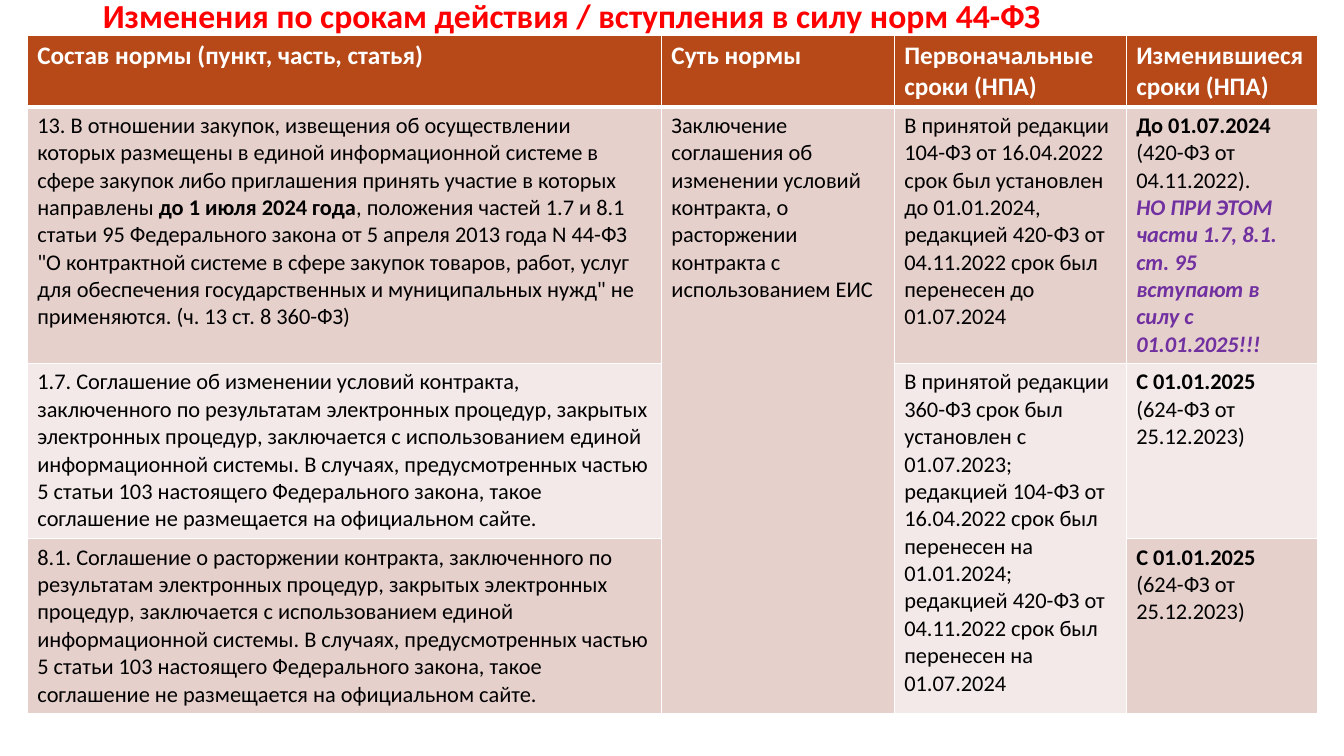
"""Build a slide with a table of changed effective dates in law 44-ФЗ."""
from lxml.etree import SubElement
from pptx import Presentation
from pptx.dml.color import RGBColor
from pptx.enum.text import MSO_ANCHOR, MSO_AUTO_SIZE, PP_ALIGN
from pptx.oxml.ns import qn
from pptx.util import Inches, Pt

THEME = {
    "font": "Calibri",
    "fills": ["B74919", "E6D0CC", "F3E9E8", "E6D0CC"],
    "border": "FFFFFF",
    "title": ("FF0000", {"size": Pt(24), "bold": True}),
    "head": ("FFFFFF", {"size": Pt(18), "bold": True}),
    "body": ("000000", {"size": Pt(16), "bold": False}),
    "bold": ("000000", {"size": Pt(16), "bold": True}),
    "alert": ("7030A0", {"size": Pt(16), "bold": True, "italic": True}),
}
COLS = [6.29, 2.31, 2.3, 1.9]
ROWS = [0.7, 2.54, 1.74, 1.73]
MERGES = [((1, 1), (3, 1)), ((2, 2), (3, 2))]

HEADS = ["Состав нормы (пункт, часть, статья)", "Суть нормы",
         "Первоначальные сроки (НПА)", "Изменившиеся сроки (НПА)"]
PROCEDURE = (
    ", заключенного по результатам электронных процедур, закрытых электронных "
    "процедур, заключается с использованием единой информационной системы. "
    "В случаях, предусмотренных частью 5 статьи 103 настоящего Федерального "
    "закона, такое соглашение не размещается на официальном сайте."
)
FROM_2025 = [[("С 01.01.2025 ", "bold"), ("(624-ФЗ от 25.12.2023)", "body")]]
CELLS = {(0, c): [[(text, "head")]] for c, text in enumerate(HEADS)} | {
    (1, 0): [[
        ("13. В отношении закупок, извещения об осуществлении которых размещены "
         "в единой информационной системе в сфере закупок либо приглашения "
         "принять участие в которых направлены ", "body"),
        ("до 1 июля 2024 года", "bold"),
        (", положения частей 1.7 и 8.1 статьи 95 Федерального закона от 5 апреля "
         "2013 года N 44-ФЗ \"О контрактной системе в сфере закупок товаров, "
         "работ, услуг для обеспечения государственных и муниципальных нужд\" "
         "не применяются. (ч. 13 ст. 8 360-ФЗ)", "body"),
    ]],
    (1, 1): [[("Заключение соглашения об изменении условий контракта, о "
               "расторжении контракта с использованием ЕИС", "body")]],
    (1, 2): [[("В принятой редакции 104-ФЗ от 16.04.2022 срок был установлен до "
               "01.01.2024, редакцией 420-ФЗ от 04.11.2022 срок был перенесен до "
               "01.07.2024", "body")]],
    (1, 3): [
        [("До 01.07.2024", "bold")],
        [("(420-ФЗ от 04.11.2022).", "body")],
        [("НО ПРИ ЭТОМ части 1.7, 8.1. ст. 95 вступают в силу с 01.01.2025!!!",
          "alert")],
    ],
    (2, 0): [[("1.7. Соглашение об изменении условий контракта" + PROCEDURE, "body")]],
    (2, 2): [[("В принятой редакции 360-ФЗ срок был установлен с 01.07.2023; "
               "редакцией 104-ФЗ от 16.04.2022 срок был перенесен на 01.01.2024; "
               "редакцией 420-ФЗ от 04.11.2022 срок был перенесен на 01.07.2024",
               "body")]],
    (2, 3): FROM_2025,
    (3, 0): [[("8.1. Соглашение о расторжении контракта" + PROCEDURE, "body")]],
    (3, 3): FROM_2025,
}


def write(tf, paras):
    for i, runs in enumerate(paras):
        p = tf.paragraphs[0] if i == 0 else tf.add_paragraph()
        p.alignment = PP_ALIGN.LEFT
        for text, style in runs:
            r = p.add_run()
            r.text = text
            color, formats = THEME[style]
            r.font.color.rgb = RGBColor.from_string(color)
            for name, value in ({"name": THEME["font"]} | formats).items():
                setattr(r.font, name, value)


def add_borders(cell, bottom):
    tcPr = cell._tc.get_or_add_tcPr()
    for i, (side, width) in enumerate(zip("LRTB", (1, 1, 1, bottom))):
        ln = SubElement(tcPr, qn(f"a:ln{side}"), w=str(Pt(width)))
        SubElement(SubElement(ln, qn("a:solidFill")), qn("a:srgbClr"), val=THEME["border"])
        tcPr.insert(i, ln)


prs = Presentation()
prs.slide_width, prs.slide_height = Inches(13.33), Inches(7.5)
s = prs.slides.add_slide(prs.slide_layouts[5])

title = s.shapes.title
for name, value in zip(("left", "top", "width", "height"), (0.92, 0, 11.5, 0.35)):
    setattr(title, name, Inches(value))
tf = title.text_frame
for name, value in {"word_wrap": True, "auto_size": MSO_AUTO_SIZE.NONE,
                    "vertical_anchor": MSO_ANCHOR.MIDDLE}.items():
    setattr(tf, name, value)
write(tf, [[("Изменения по срокам действия / вступления в силу норм 44-ФЗ", "title")]])
tf.paragraphs[0].line_spacing = 0.9

tbl = s.shapes.add_table(len(ROWS), len(COLS), Inches(0.27), Inches(0.35),
                         Inches(sum(COLS)), Inches(sum(ROWS))).table
for col, width in zip(tbl.columns, COLS):
    col.width = Inches(width)
for row, height in zip(tbl.rows, ROWS):
    row.height = Inches(height)
for first, last in MERGES:
    tbl.cell(*first).merge(tbl.cell(*last))
for r, color in enumerate(THEME["fills"]):
    for c in range(len(COLS)):
        cell = tbl.cell(r, c)
        cell.fill.solid()
        cell.fill.fore_color.rgb = RGBColor.from_string(color)
        add_borders(cell, 3 if r == 0 else 1)
        write(cell.text_frame, CELLS.get((r, c), []))

prs.save("out.pptx")
